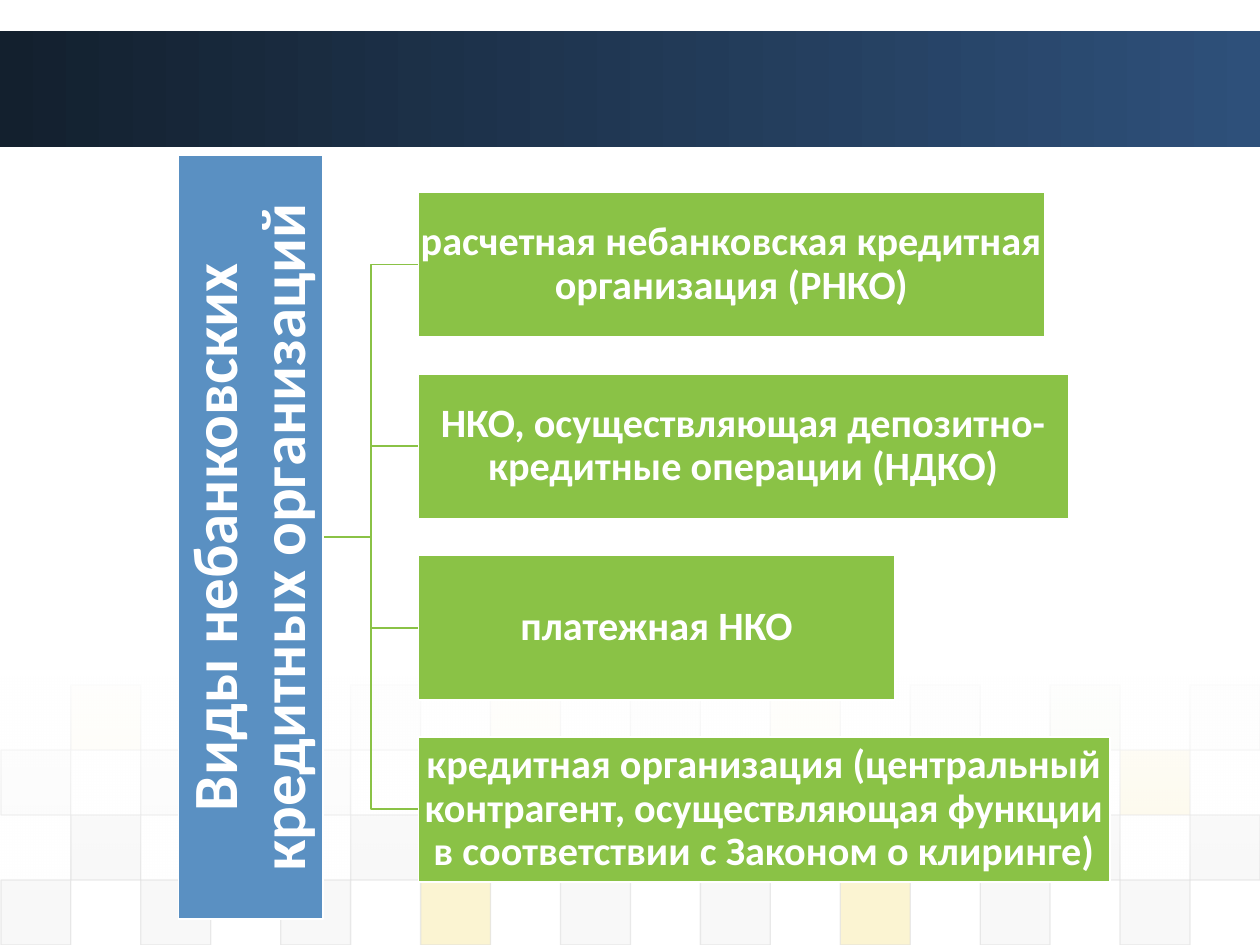
from lxml.etree import SubElement
from pptx import Presentation
from pptx.dml.color import RGBColor
from pptx.enum.shapes import MSO_CONNECTOR as Connector, MSO_SHAPE as Shape
from pptx.enum.text import MSO_ANCHOR as Anchor, PP_ALIGN as Align
from pptx.oxml.ns import qn
from pptx.util import Cm, Pt

COLORS = {
    "white": "FFFFFF",
    "navy_dark": "13202E",
    "navy_light": "2E507A",
    "blue": "5A90C2",
    "green": "8AC246",
    "gold": "EFC821",
    "gray": "DDDDDD",
    "pale": "EAEAEA",
}

TILE_ROWS = [
    (5, {1: "gold", 5: "pale", 7: "gold", 9: "gray", 11: "gold",
         13: "pale", 15: "green", 17: "pale"}),
    (10, {0: "gray", 2: "gray", 4: "gray", 6: "gray", 16: "gold"}),
    (20, {column: "gray" for column in (1, 5, 15, 17)}),
    (20, {column: "gold" if column in (6, 12) else "gray"
          for column in range(0, 17, 2)}),
]

TITLE = "Виды небанковских кредитных организаций"
KINDS = [
    ("расчетная небанковская кредитная организация (РНКО)", 12.62),
    ("НКО, осуществляющая депозитно-кредитные операции (НДКО)", 13.1),
    ("платежная НКО", 9.6),
    ("кредитная организация (центральный контрагент, осуществляющая "
     "функции в соответствии с Законом о клиринге)", 13.94),
]


def rgb(name):
    """Return the named colour."""
    return RGBColor.from_string(COLORS[name])


def set_alpha(color_parent, percent):
    """Make the colour inside an element partly transparent."""
    color = next(color_parent.iter(qn("a:srgbClr")))
    SubElement(color, qn("a:alpha"), val=str(percent * 1000))


def add_rect(slide, left, top, width, height, fill=None, line=None, weight=1):
    """Add a flat rectangle measured in centimetres."""
    rect = slide.shapes.add_shape(
        Shape.RECTANGLE, Cm(left), Cm(top), Cm(width), Cm(height))
    rect.shadow.inherit = False
    if fill:
        rect.fill.solid()
        rect.fill.fore_color.rgb = rgb(fill)
    if line:
        rect.line.color.rgb = rgb(line)
        rect.line.width = Pt(weight)
    else:
        rect.line.fill.background()
    return rect


def add_gradient(rect, start, end, angle=0, alphas=()):
    """Fill a rectangle with a two-colour gradient."""
    rect.fill.gradient()
    rect.fill.gradient_angle = angle
    stops = rect.fill.gradient_stops
    for stop, name, position in zip(stops, (start, end), (0, 1)):
        stop.color.rgb = rgb(name)
        stop.position = position
    for stop, percent in zip(rect.element.iter(qn("a:gs")), alphas):
        set_alpha(stop, percent)


def write(shape, text, size=23, color="white", inset=0.04):
    """Write bold centred text into a shape."""
    frame = shape.text_frame
    frame.word_wrap = True
    frame.vertical_anchor = Anchor.MIDDLE
    frame.margin_left = frame.margin_right = Cm(inset)
    frame.margin_top = frame.margin_bottom = Cm(inset)
    paragraph = frame.paragraphs[0]
    paragraph.alignment = Align.CENTER
    paragraph.line_spacing = 0.9
    run = paragraph.add_run()
    run.text = text
    run.font.name = "Calibri"
    run.font.size = Pt(size)
    run.font.bold = True
    run.font.color.rgb = rgb(color)


def draw_header(slide, left, top, width, height):
    """Draw the dark band across the top."""
    band = add_rect(slide, left, top, width, height)
    add_gradient(band, "navy_dark", "navy_light")


def draw_tiles(slide, left, top, width, height):
    """Draw the checkered tiles and the white fade over them."""
    column_width, row_height = width / 18, height / len(TILE_ROWS)
    for row, (alpha, tiles) in enumerate(TILE_ROWS):
        for column, color in tiles.items():
            tile = add_rect(
                slide, left + column * column_width, top + row * row_height,
                column_width, row_height, color, "gray", 0.75)
            properties = tile.element.spPr
            set_alpha(properties.find(qn("a:solidFill")), alpha)
            set_alpha(properties.find(qn("a:ln")), 60)
    fade = add_rect(slide, 0, top - 0.17, 25.4, 4.11)
    add_gradient(fade, "white", "white", angle=270, alphas=(90, 0))


def draw_branch(slide, start_x, start_y, end_x, end_y):
    """Draw one elbow line from the title to a kind."""
    branch = slide.shapes.add_connector(
        Connector.ELBOW, Cm(start_x), Cm(start_y), Cm(end_x), Cm(end_y))
    branch.line.color.rgb = rgb("green")
    branch.line.width = Pt(1)
    SubElement(branch.element.spPr, qn("a:effectLst"))


def draw_hierarchy(slide, left, top, height):
    """Draw the vertical title, its branches and the four kinds."""
    thickness, pitch = 2.92, 3.66
    middle = top + height / 2
    kinds_left = left + thickness + 1.92
    centers = [middle + (index - (len(KINDS) - 1) / 2) * pitch
               for index in range(len(KINDS))]

    for center in centers:
        draw_branch(slide, left + thickness, middle, kinds_left, center)

    title = add_rect(
        slide, left + (thickness - height) / 2, middle - thickness / 2,
        height, thickness, "blue", "white")
    title.rotation = 270
    write(title, TITLE, size=36, inset=0.06)

    for (text, width), center in zip(KINDS, centers):
        kind = add_rect(slide, kinds_left, center - thickness / 2,
                        width, thickness, "green", "white")
        write(kind, text)


def main():
    """Build the slide and save it."""
    deck = Presentation()
    deck.slide_width, deck.slide_height = Cm(25.4), Cm(19.05)
    slide = deck.slides.add_slide(deck.slide_layouts[6])
    draw_header(slide, 0, 0.63, 25.4, 2.33)
    draw_tiles(slide, 0.02, 13.81, 25.38, 5.24)
    draw_hierarchy(slide, 3.6, 3.13, 15.39)
    deck.save("out.pptx")


if __name__ == "__main__":
    main()
